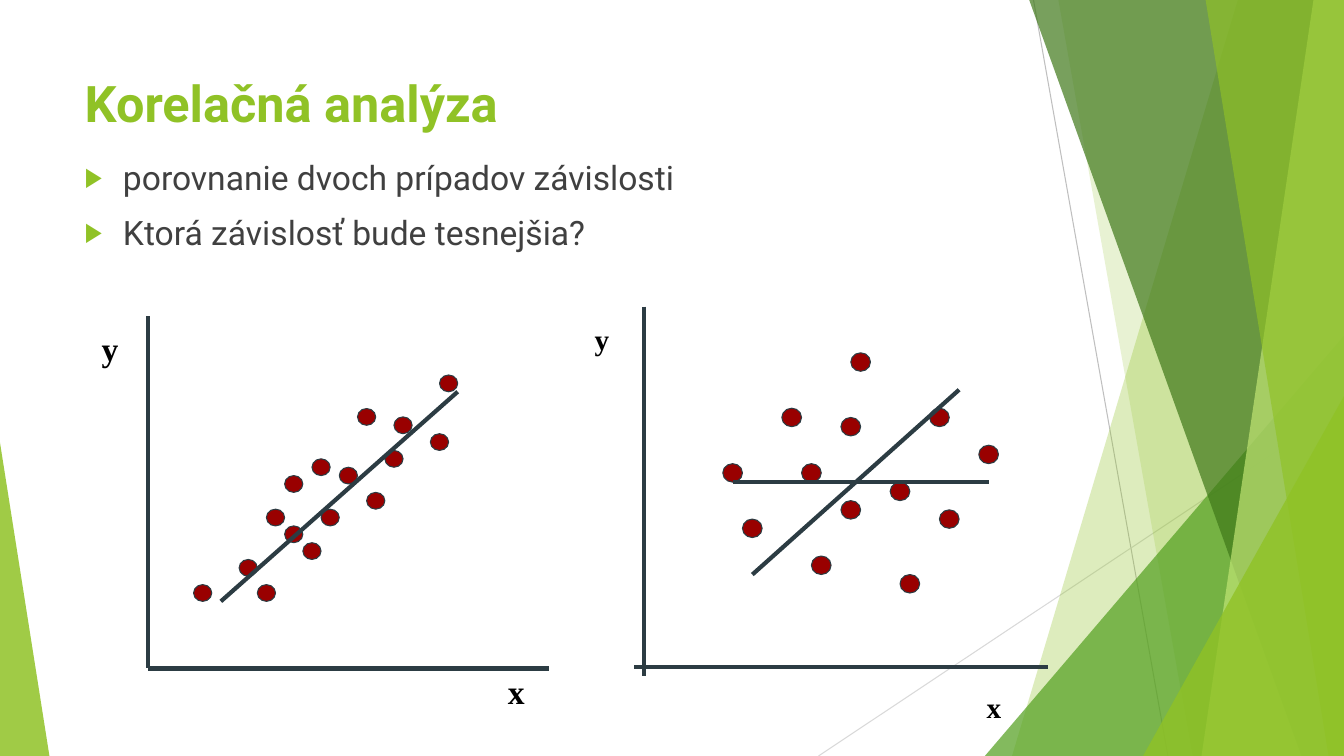
from dataclasses import dataclass
from typing import Optional

from lxml.etree import SubElement
from pptx import Presentation
from pptx.dml.color import RGBColor
from pptx.enum.shapes import MSO_CONNECTOR, MSO_SHAPE
from pptx.enum.text import MSO_ANCHOR, MSO_AUTO_SIZE, PP_ALIGN
from pptx.oxml.ns import qn
from pptx.util import Inches, Pt

COLORS = {
    "lime": "90C226", "green": "54A021", "forest": "3F7819", "pale": "C0E474",
    "text": "404040", "label": "000000", "dot": "990000", "axis": "2C3C43",
    "ray": "BFBFBF", "faint ray": "D9D9D9",
}
WIDTH, HEIGHT = Inches(13.33), Inches(7.5)
Point = tuple[float, float]
Box = tuple[float, float, float, float]


@dataclass(frozen=True)
class Grid:
    left: float
    top: float
    width: float
    height: float
    columns: int
    rows: int

    def place(self, column: float, row: float) -> tuple[int, int]:
        x = self.left + self.width * column / self.columns
        y = self.top + self.height * row / self.rows
        return round(WIDTH * x / 100), round(HEIGHT * y / 100)

    def box(self, left: float, top: float, width: float, height: float) -> tuple[int, int, int, int]:
        x, y = self.place(left, top)
        right, bottom = self.place(left + width, top + height)
        return x, y, right - x, bottom - y


@dataclass(frozen=True)
class Facet:
    corners: tuple[Point, ...]
    color: str
    opacity: int


@dataclass(frozen=True)
class Wedge:
    box: Box
    apex: int
    color: str
    opacity: int


@dataclass(frozen=True)
class Segment:
    start: Point
    end: Point
    color: str = "axis"
    weight: float = 3


@dataclass(frozen=True)
class AxisLabel:
    text: str
    box: Box
    size: int
    baseline: Optional[int] = None


@dataclass(frozen=True)
class ScatterPlot:
    grid: Grid
    axes: tuple[Segment, ...]
    observations: tuple[Point, ...]
    trends: tuple[Segment, ...]
    labels: tuple[AxisLabel, ...]


PERCENT = Grid(0, 0, 100, 100, 100, 100)
RAYS = (
    Segment((76.9, 0), (86.9, 100), "ray", 0.75),
    Segment((100, 53.73), (60.9, 100), "faint ray", 0.75),
)
BACKDROP = (
    Facet(((92.1, 0), (100, 0), (100, 100), (75.3, 100)), "lime", 30),
    Facet(((78.75, 0), (100, 0), (100, 100), (88.73, 100)), "lime", 20),
    Wedge((73.28, 44.4, 26.72, 55.6), 1, "green", 72),
    Facet(((76.58, 0), (100, 0), (100, 100), (96.83, 100)), "forest", 70),
    Facet(((97.73, 0), (100, 0), (100, 100), (89.4, 100)), "pale", 70),
    Facet(((89.7, 0), (100, 0), (100, 100), (98.85, 100)), "lime", 65),
    Wedge((85.05, 52.4, 14.95, 47.6), 1, "lime", 80),
    Wedge((0, 58.53, 3.68, 41.47), 0, "lime", 85),
)
PLOTS = (
    ScatterPlot(
        Grid(14.4, 49.6, 18.3, 27.73, 27, 25),
        (Segment((-5, -7), (-5, 35)), Segment((-5, 35), (39, 35))),
        ((14, 16), (13, 10), (8, 16), (10, 18), (12, 20), (5, 22), (7, 25), (16, 11),
         (0, 25), (19, 14), (10, 12), (18, 4), (26, 7), (22, 5), (21, 9), (27, 0)),
        (Segment((3, 27), (29, 2)),),
        (AxisLabel("y", (6.83, 42.67, 3, 6.67), 24),
         AxisLabel("x", (37.05, 88.13, 3, 6.67), 24)),
    ),
    ScatterPlot(
        Grid(53.78, 46.67, 19.05, 29.33, 26, 24),
        (Segment((-8, -5), (-8, 35)), Segment((-9, 34), (33, 34))),
        ((21, 6), (12, 7), (8, 12), (6, 6), (13, 0), (2, 18), (17, 14),
         (9, 22), (0, 12), (18, 24), (12, 16), (22, 17), (26, 10)),
        (Segment((3, 24), (24, 4)), Segment((1, 14), (27, 14))),
        (AxisLabel("y", (43.5, 41.07, 3.68, 7.33), 36, 30),
         AxisLabel("x", (72.68, 89.73, 6.6, 7.33), 36, 30)),
    ),
)


def rgb(color: str) -> RGBColor:
    return RGBColor.from_string(COLORS[color])


def write(paragraph, text: str, *, size: float, color: str, font: str = "Roboto",
          bold: bool = False, baseline: Optional[int] = None) -> None:
    run = paragraph.add_run()
    run.text = text
    run.font.size, run.font.name, run.font.bold = Pt(size), font, bold
    run.font.color.rgb = rgb(color)
    paragraph.alignment = PP_ALIGN.LEFT
    if baseline is not None:
        run.font._element.set("baseline", str(baseline * 1000))


def add_bullet(paragraph) -> None:
    paragraph.space_before = Pt(10)
    properties = paragraph._p.get_or_add_pPr()
    properties.set("marL", str(Inches(0.38)))
    properties.set("indent", str(-Inches(0.38)))
    bullet_color = SubElement(properties, qn("a:buClr"))
    SubElement(bullet_color, qn("a:srgbClr"), val=COLORS["lime"])
    SubElement(properties, qn("a:buSzPct"), val="80000")
    SubElement(properties, qn("a:buFont"), typeface="Arial")
    SubElement(properties, qn("a:buChar"), char="▶")


def draw_segment(slide, grid: Grid, segment: Segment) -> None:
    line = slide.shapes.add_connector(
        MSO_CONNECTOR.STRAIGHT, *grid.place(*segment.start), *grid.place(*segment.end))
    line.line.color.rgb = rgb(segment.color)
    line.line.width = Pt(segment.weight)
    SubElement(line._element.spPr, qn("a:effectLst"))


def draw_backdrop(slide, part: Facet | Wedge) -> None:
    if isinstance(part, Facet):
        first, *others = (PERCENT.place(*corner) for corner in part.corners)
        outline = slide.shapes.build_freeform(*first)
        outline.add_line_segments(others, close=True)
        pane = outline.convert_to_shape()
    else:
        pane = slide.shapes.add_shape(MSO_SHAPE.ISOSCELES_TRIANGLE, *PERCENT.box(*part.box))
        pane.adjustments[0] = part.apex
    pane.shadow.inherit = False
    pane.fill.solid()
    pane.fill.fore_color.rgb = rgb(part.color)
    pane.line.fill.background()
    tint = pane._element.spPr.find(".//" + qn("a:srgbClr"))
    SubElement(tint, qn("a:alpha"), val=str(part.opacity * 1000))


def draw_plot(slide, plot: ScatterPlot) -> None:
    for axis in plot.axes:
        draw_segment(slide, plot.grid, axis)
    for column, row in plot.observations:
        dot = slide.shapes.add_shape(
            MSO_SHAPE.FLOWCHART_CONNECTOR, *plot.grid.box(column, row, 2, 2))
        dot.shadow.inherit = False
        dot.fill.solid()
        dot.fill.fore_color.rgb = rgb("dot")
        dot.line.color.rgb = rgb("axis")
        dot.line.width = Pt(0.75)
    for trend in plot.trends:
        draw_segment(slide, plot.grid, trend)
    for label in plot.labels:
        frame = slide.shapes.add_textbox(*PERCENT.box(*label.box)).text_frame
        frame.word_wrap = True
        write(frame.paragraphs[0], label.text, size=label.size, color="label",
              font="Times New Roman", bold=True, baseline=label.baseline)


def place_placeholder(placeholder, box: Box):
    placeholder.left, placeholder.top, placeholder.width, placeholder.height = PERCENT.box(*box)
    frame = placeholder.text_frame
    frame.word_wrap, frame.auto_size = True, MSO_AUTO_SIZE.NONE
    frame.vertical_anchor = MSO_ANCHOR.TOP
    return frame


def main() -> None:
    presentation = Presentation()
    presentation.slide_width, presentation.slide_height = WIDTH, HEIGHT
    slide = presentation.slides.add_slide(presentation.slide_layouts[1])
    for ray in RAYS:
        draw_segment(slide, PERCENT, ray)
    for part in BACKDROP:
        draw_backdrop(slide, part)
    heading = place_placeholder(slide.shapes.title, (5.55, 8.93, 70.5, 11.2))
    write(heading.paragraphs[0], "Korelačná analýza", size=36, color="lime", bold=True)
    points = place_placeholder(slide.placeholders[1], (5.55, 20.13, 70.5, 68))
    points.add_paragraph()
    questions = ("porovnanie dvoch prípadov závislosti", "Ktorá závislosť bude tesnejšia?")
    for paragraph, question in zip(points.paragraphs, questions):
        write(paragraph, question, size=24, color="text")
        add_bullet(paragraph)
    for plot in PLOTS:
        draw_plot(slide, plot)
    presentation.save("out.pptx")


if __name__ == "__main__":
    main()
